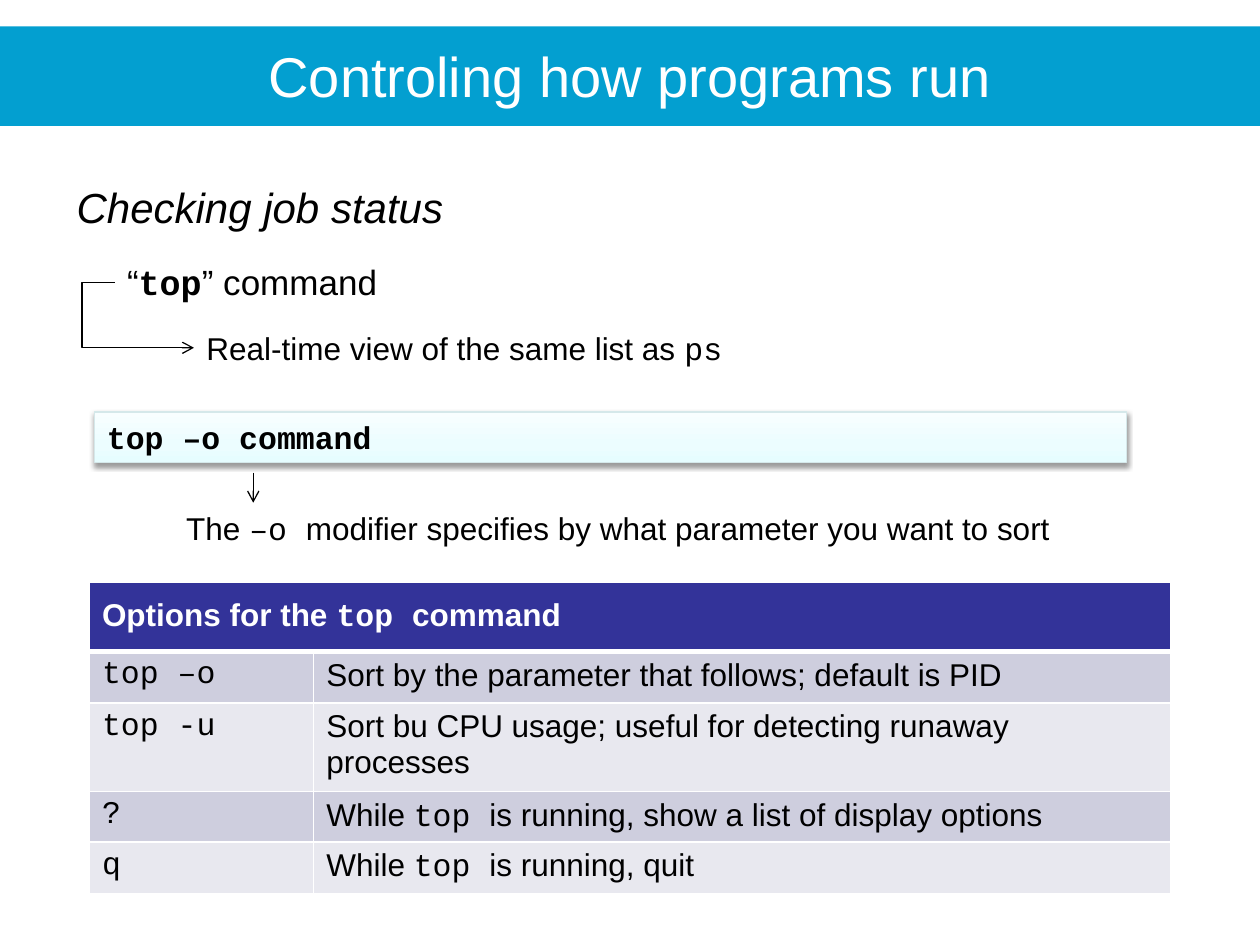
import copy

import lxml.etree
import pptx
import pptx.dml.color
import pptx.enum.shapes
import pptx.enum.text
import pptx.oxml
import pptx.oxml.ns
import pptx.util
from pptx.util import Inches

SANS = "Arial"
MONO = "Courier New"
BLACK = "000000"
WHITE = "FFFFFF"
TABLE_ROWS = [
    ("top –o", [("Sort by the parameter that follows; default is PID", SANS)]),
    ("top -u", [("Sort bu CPU usage; useful for detecting runaway processes", SANS)]),
    ("?", [("While ", SANS), ("top ", MONO),
           ("is running, show a list of display options", SANS)]),
    ("q", [("While ", SANS), ("top ", MONO), ("is running, quit", SANS)]),
]


def color(value):
    return pptx.dml.color.RGBColor.from_string(value)


def add_element(parent, tag, **attributes):
    element = lxml.etree.SubElement(parent, pptx.oxml.ns.qn(tag))
    for name, value in attributes.items():
        element.set(name, str(value))
    return element


def write_runs(paragraph, parts, size=18, text_color=BLACK, bold=False, italic=False):
    for text, name, *own_bold in parts:
        run = paragraph.add_run()
        run.text = text
        run.font.name = name
        run.font.size = pptx.util.Pt(size)
        run.font.bold = own_bold[0] if own_bold else bold
        run.font.italic = italic
        run.font.color.rgb = color(text_color)


def add_text(slide, box, parts, **style):
    shape = slide.shapes.add_textbox(*map(Inches, box))
    shape.text_frame.word_wrap = True
    write_runs(shape.text_frame.paragraphs[0], parts, **style)
    return shape


def add_arrow(slide, kind, start, end):
    arrow = slide.shapes.add_connector(kind, *map(Inches, (*start, *end)))
    arrow.line.color.rgb = color(BLACK)
    arrow.line.width = pptx.util.Pt(0.75)
    add_element(arrow.line._get_or_add_ln(), "a:tailEnd", type="arrow")
    add_element(arrow._element.spPr, "a:effectLst")
    return arrow


def add_title_band(slide, box):
    left, top, width, height = box
    band = slide.shapes.add_shape(
        pptx.enum.shapes.MSO_SHAPE.RECTANGLE, *map(Inches, box))
    band.shadow.inherit = False
    band.fill.solid()
    band.fill.fore_color.rgb = color("039FD0")
    band.line.fill.background()
    title = slide.shapes.title
    title._element.addprevious(band._element)
    title.left, title.top = Inches(left), Inches(top + 0.07)
    title.width, title.height = Inches(width), Inches(height - 0.15)
    frame = title.text_frame
    frame.vertical_anchor = pptx.enum.text.MSO_ANCHOR.TOP
    frame.auto_size = pptx.enum.text.MSO_AUTO_SIZE.NONE
    paragraph = frame.paragraphs[0]
    paragraph.alignment = pptx.enum.text.PP_ALIGN.CENTER
    write_runs(paragraph, [("Controling how programs run", SANS)], 32, WHITE)


def add_command_outline(slide, box):
    left, top, width, height = box
    add_text(slide, (left, top, 7.56, 0.5), [("Checking job status", SANS)],
             size=24, italic=True)
    command = add_text(
        slide, (left + 0.4, top + 0.63, 7.32, 0.44),
        [("“", SANS), ("top", MONO, True), ("” command", SANS)], size=20)
    detail = add_text(
        slide, (left + 1.03, top + height - 0.4, width - 1.03, 0.4),
        [("Real-time view of the same list as ", SANS), ("ps", MONO)])
    elbow = add_arrow(slide, pptx.enum.shapes.MSO_CONNECTOR.ELBOW,
                      (left + 0.4, top + 0.85), (left + 1.03, top + height - 0.2))
    elbow.begin_connect(command, 1)
    elbow.end_connect(detail, 1)
    guides = elbow._element.spPr.prstGeom.get_or_add_avLst()
    add_element(guides, "a:gd", name="adj1", fmla="val -41000")


def add_code_bar(slide, box):
    bar = slide.shapes.add_shape(
        pptx.enum.shapes.MSO_SHAPE.RECTANGLE, *map(Inches, box))
    bar.fill.gradient()
    bar.fill.gradient_angle = 90
    first_stop = bar.fill._fill._gradFill.gsLst[0]
    first_stop.addnext(copy.deepcopy(first_stop))
    stops = [(0, "E6FDFF"), (0.35, "ECFDFF"), (1, "F8FEFF")]
    for stop, (position, value) in zip(bar.fill.gradient_stops, stops):
        stop.position = position
        stop.color.rgb = color(value)
    bar.line.color.rgb = color("D5E8EA")
    bar.line.width = pptx.util.Pt(0.75)
    bar.shadow.inherit = False
    effects = bar._element.spPr.find(pptx.oxml.ns.qn("a:effectLst"))
    shadow = add_element(effects, "a:outerShdw", blurRad=pptx.util.Pt(3.1),
                         dist=pptx.util.Pt(1.6), dir=5400000, rotWithShape=0)
    shade = add_element(shadow, "a:srgbClr", val=BLACK)
    add_element(shade, "a:alpha", val=38000)
    bar.text_frame.word_wrap = True
    bar.text_frame.vertical_anchor = pptx.enum.text.MSO_ANCHOR.TOP
    paragraph = bar.text_frame.paragraphs[0]
    paragraph.alignment = pptx.enum.text.PP_ALIGN.LEFT
    write_runs(paragraph, [("top –o command", MONO)], bold=True)


def add_modifier_note(slide, box):
    left, top, width, height = box
    arrow_x = left + 0.63
    add_arrow(slide, pptx.enum.shapes.MSO_CONNECTOR.STRAIGHT,
              (arrow_x, top), (arrow_x, top + 0.24))
    add_text(slide, (left, top + 0.24, width, height - 0.24),
             [("The ", SANS), ("–o ", MONO),
              ("modifier specifies by what parameter you want to sort", SANS)])


def style_cell(cell, fill, top_width, bottom_width):
    cell.fill.solid()
    cell.fill.fore_color.rgb = color(fill)
    properties = cell._tc.get_or_add_tcPr()
    widths = {"a:lnL": 1, "a:lnR": 1, "a:lnT": top_width, "a:lnB": bottom_width}
    for index, (tag, width) in enumerate(widths.items()):
        border = add_element(properties, tag, w=pptx.util.Pt(width))
        add_element(add_element(border, "a:solidFill"), "a:srgbClr", val=WHITE)
        properties.insert(index, border)


def add_options_table(slide, box):
    table = slide.shapes.add_table(
        len(TABLE_ROWS) + 1, 2, *map(Inches, box)).table
    for column, width in zip(table.columns, (1.78, 6.8)):
        column.width = Inches(width)
    for row, height in zip(table.rows, (0.55, 0.41, 0.7, 0.4, 0.41)):
        row.height = Inches(height)
    header = table.cell(0, 0)
    header.merge(table.cell(0, 1))
    header.vertical_anchor = pptx.enum.text.MSO_ANCHOR.MIDDLE
    write_runs(header.text_frame.paragraphs[0],
               [("Options for the ", SANS), ("top ", MONO), ("command", SANS)],
               text_color=WHITE, bold=True)
    for cell in table.rows[0].cells:
        style_cell(cell, "333399", 1, 3)
    for index, (option, meaning) in enumerate(TABLE_ROWS, 1):
        fill = "CECEDE" if index % 2 else "E8E8EF"
        for cell, parts in zip(table.rows[index].cells, ([(option, MONO)], meaning)):
            style_cell(cell, fill, 3 if index == 1 else 1, 1)
            write_runs(cell.text_frame.paragraphs[0], parts)


def main():
    presentation = pptx.Presentation()
    presentation.slide_width = Inches(10)
    presentation.slide_height = Inches(7.5)
    slide = presentation.slides.add_slide(presentation.slide_layouts[5])
    add_title_band(slide, (0, 0.21, 10, 0.79))
    add_command_outline(slide, (0.51, 1.39, 9.14, 1.57))
    add_code_bar(slide, (0.75, 3.27, 8.19, 0.4))
    add_modifier_note(slide, (1.38, 3.75, 7.4, 0.64))
    add_options_table(slide, (0.71, 4.62, 8.58, 2.47))
    presentation.save("out.pptx")


if __name__ == "__main__":
    main()
